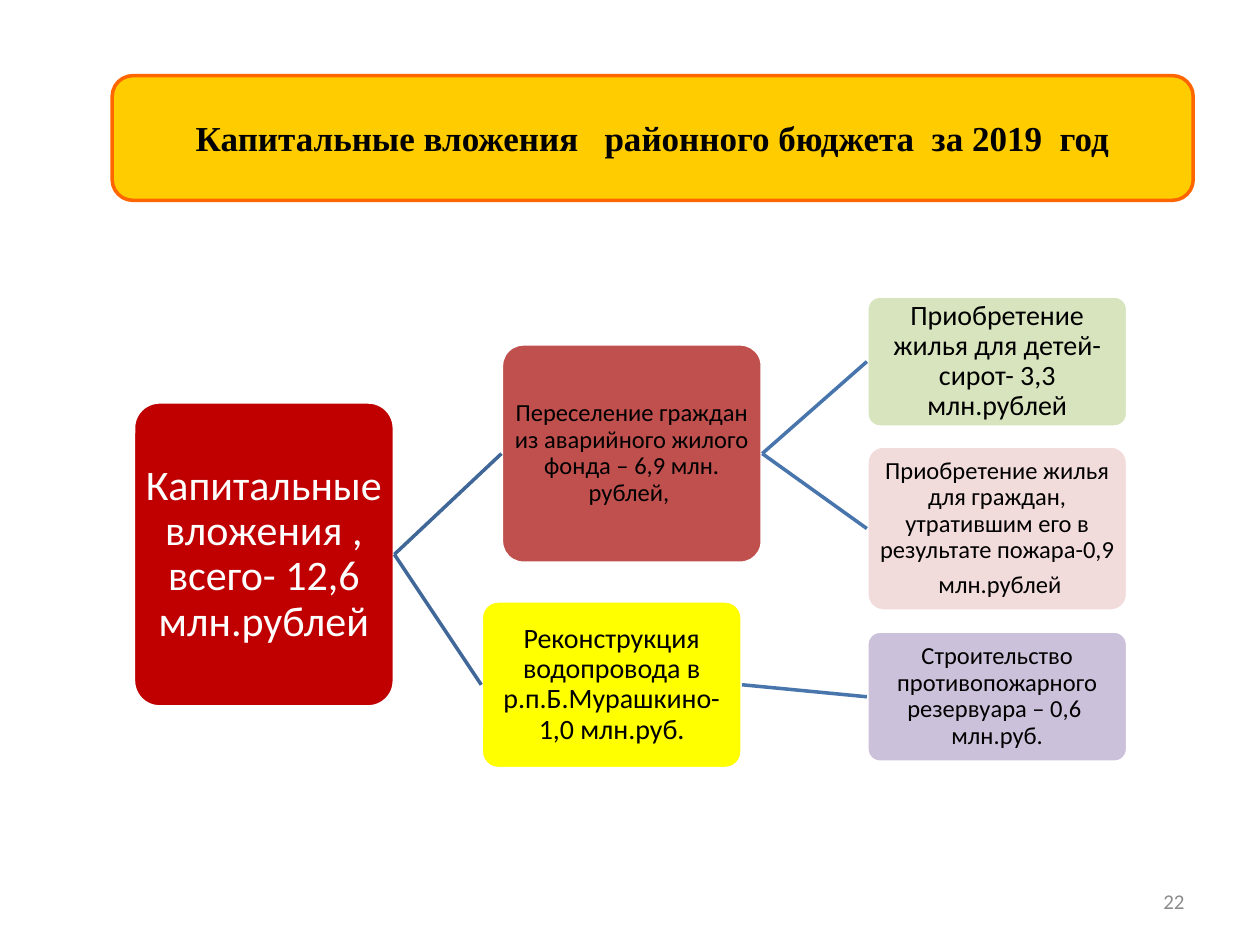
from pptx import Presentation
from pptx.dml.color import RGBColor as RGB
from pptx.enum.shapes import MSO_CONNECTOR as Link, MSO_SHAPE as Form
from pptx.enum.text import MSO_ANCHOR as Anchor, MSO_AUTO_SIZE as Fit, PP_ALIGN as Align
from pptx.oxml.ns import qn
from pptx.util import Inches, Pt
from lxml.etree import SubElement

HUES = {
    "gold": "FFCC00", "orange": "FF6600", "red": "C00000", "brick": "C0504D",
    "green": "D7E4BD", "pink": "F2DCDB", "yellow": "FFFF00", "lilac": "CCC1DA",
    "white": "FFFFFF", "black": "000000", "gray": "8C8C8C",
    "navy": "3F6797", "blue": "4875AC",
}
WIDE = 2.07


class Deck:
    """Holds the style and the current slide."""

    def __init__(self):
        self.show = Presentation()
        self.show.slide_width, self.show.slide_height = Inches(10), Inches(7.5)
        self.slide = self.show.slides.add_slide(self.show.slide_layouts[5])
        self.shapes = self.slide.shapes

    def hue(self, name):
        return RGB.from_string(HUES[name])

    def apply(self, item, style):
        for key, value in style.items():
            setattr(item, key, value)

    def label(self, shape, lines, size, hue="black", font="Calibri",
              bold=False, align=Align.CENTER, inset=0.01, para=None):
        frame = shape.text_frame
        pad = Inches(inset)
        self.apply(frame, {
            "text": "\n".join(lines), "word_wrap": True, "auto_size": Fit.NONE,
            "vertical_anchor": Anchor.MIDDLE, "margin_left": pad,
            "margin_right": pad, "margin_top": pad, "margin_bottom": pad})
        for part in frame.paragraphs:
            self.apply(part, {"alignment": align, **(para or {})})
            self.apply(part.font, {"size": Pt(size), "name": font, "bold": bold})
            part.font.color.rgb = self.hue(hue)

    def panel(self, box, fill, edge, adj=None):
        shape = self.shapes.add_shape(Form.ROUNDED_RECTANGLE, *map(Inches, box))
        shape.shadow.inherit = False
        shape.fill.solid()
        shape.fill.fore_color.rgb = self.hue(fill)
        shape.line.color.rgb = self.hue(edge)
        shape.line.width = Pt(2)
        if adj:
            shape.adjustments[0] = adj
        return shape

    def title(self, text, box):
        plate = self.panel(box, "gold", "orange")
        head = self.shapes.title
        self.apply(head, dict(zip(("left", "top", "width", "height"), map(Inches, box))))
        plate.element.addnext(head.element)
        self.label(head, [text], 20, font="Times New Roman", bold=True, inset=0.1)

    def node(self, left, top, high, fill, size, lines, hue="black"):
        shape = self.panel((left, top, WIDE, high), fill, "white", 0.1)
        para = {"line_spacing": 0.9, "space_after": Pt(round(size * 0.35, 1))}
        self.label(shape, lines, size, hue, para=para)
        return shape

    def join(self, start, end, hue):
        line = self.shapes.add_connector(Link.STRAIGHT, 0, 0, 0, 0)
        line.begin_connect(start, 3)
        line.end_connect(end, 1)
        line.line.color.rgb = self.hue(hue)
        line.line.width = Pt(2)
        SubElement(line.element.spPr, qn("a:effectLst"))

    def number(self, text, box):
        shape = self.shapes.add_textbox(*map(Inches, box))
        self.label(shape, [text], 12, "gray", align=Align.RIGHT, inset=0.1)


def main():
    deck = Deck()
    deck.title("Капитальные вложения   районного бюджета  за 2019  год",
               (0.89, 0.6, 8.58, 0.99))
    total = deck.node(1.06, 3.19, 2.42, "red", 24,
                      ["Капитальные вложения , всего- 12,6 млн.рублей"], "white")
    move = deck.node(3.98, 2.73, 1.74, "brick", 14,
                     ["Переселение граждан из аварийного жилого фонда – 6,9 млн. рублей, "])
    water = deck.node(3.82, 4.77, 1.33, "yellow", 16,
                      ["Реконструкция водопровода в р.п.Б.Мурашкино- 1,0 млн.руб."])
    leaf = 6.88
    homes = deck.node(leaf, 2.35, 1.04, "green", 16,
                      ["Приобретение жилья для детей-сирот- 3,3 млн.рублей"])
    fire = deck.node(leaf, 3.54, 1.31, "pink", 14,
                     ["Приобретение жилья для граждан, утратившим его в результате пожара-0,9",
                      " млн.рублей"])
    tank = deck.node(leaf, 5.01, 1.04, "lilac", 14,
                     ["Строительство противопожарного резервуара – 0,6  млн.руб."])
    for start, ends, hue in ((total, (move, water), "navy"),
                             (move, (homes, fire), "blue"),
                             (water, (tank,), "blue")):
        for end in ends:
            deck.join(start, end, hue)
    deck.number("22", (7.17, 6.95, 2.33, 0.4))
    deck.show.save("out.pptx")


if __name__ == "__main__":
    main()
